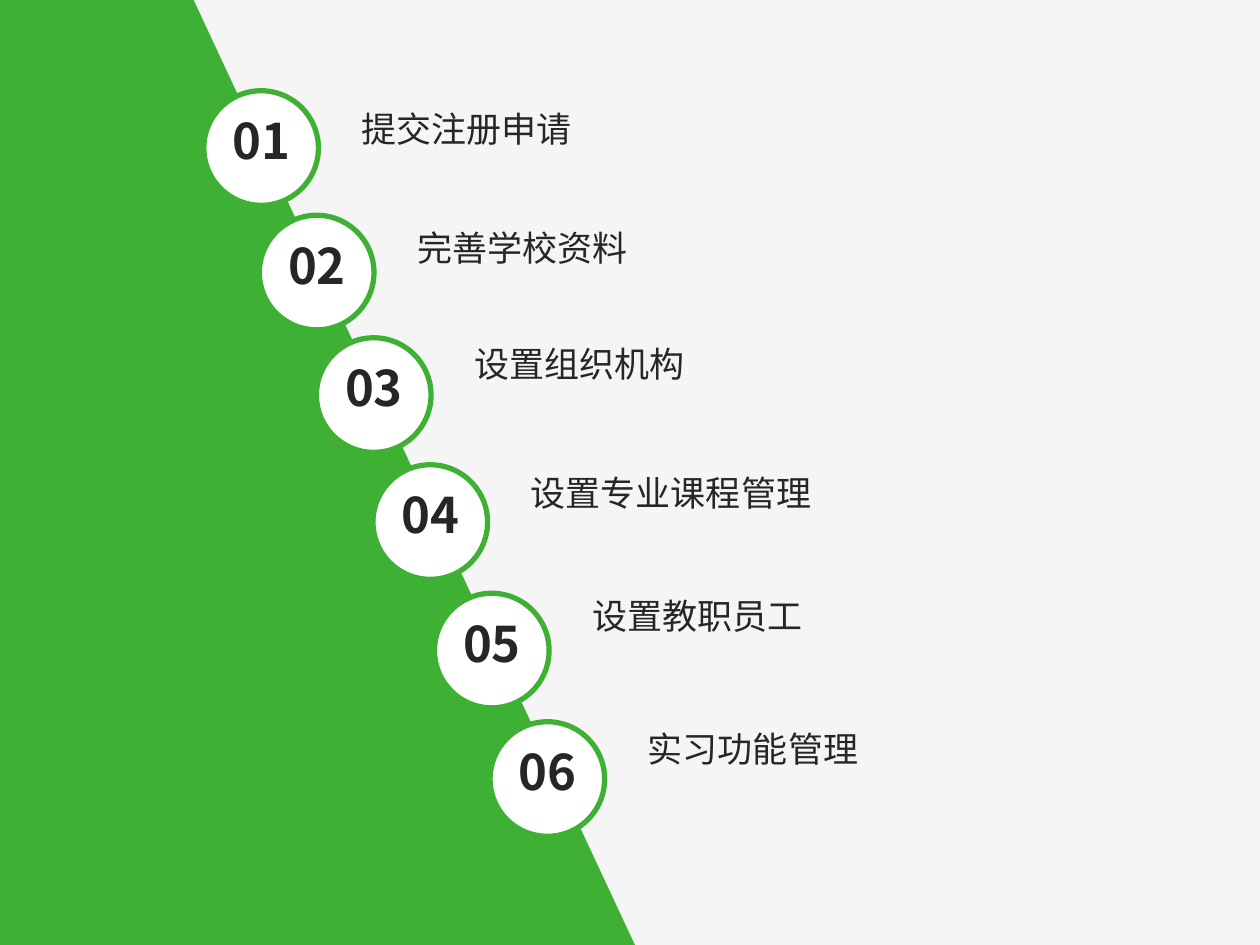
from dataclasses import dataclass

from lxml.etree import SubElement
from pptx import Presentation
from pptx.dml.color import RGBColor
from pptx.enum.shapes import MSO_SHAPE
from pptx.enum.text import PP_ALIGN
from pptx.oxml.ns import qn
from pptx.util import Cm, Pt

GREEN = RGBColor(0x3E, 0xB0, 0x34)
WHITE = RGBColor(0xFF, 0xFF, 0xFF)
PAPER = RGBColor(0xF5, 0xF5, 0xF5)
INK = RGBColor(0x26, 0x26, 0x26)
SANS = "Noto Sans CJK SC"
SERIF = "Times New Roman"
DIAMETER = 2.31
LABEL_OFFSET = 2.93


@dataclass
class Step:
    text: str
    x: float
    y: float
    label_y: float
    label_w: float
    font: str = SERIF


STEPS = [
    Step("提交注册申请", 4.11, 1.83, 2.16, 15.52, SANS),
    Step("完善学校资料", 5.23, 4.34, 4.57, 15.52, SANS),
    Step("设置组织机构", 6.38, 6.81, 6.91, 13.89),
    Step("设置专业课程管理", 7.52, 9.37, 9.5, 13.89),
    Step("设置教职员工", 8.76, 11.96, 11.99, 13.87),
    Step("实习功能管理", 9.88, 14.55, 14.66, 12.27),
]


def add_text(shapes, text: str, x: float, y: float, w: float, h: float, *,
             size: int, font: str = SANS, bold: bool = False,
             align: PP_ALIGN = PP_ALIGN.LEFT) -> None:
    tf = shapes.add_textbox(Cm(x), Cm(y), Cm(w), Cm(h)).text_frame
    tf.word_wrap = True
    tf.margin_top = tf.margin_bottom = 0
    p = tf.paragraphs[0]
    p.alignment = align
    r = p.add_run()
    r.text = text
    r.font.size = Pt(size)
    r.font.bold = bold
    r.font.color.rgb = INK
    r.font.name = font
    SubElement(r.font._element, qn("a:ea")).set("typeface", SANS)


def add_panel(s) -> None:
    builder = s.shapes.build_freeform(Cm(12.8), Cm(19.05))
    corners = [(3.89, -0.03), (-0.08, -0.03), (-0.03, 19.15)]
    builder.add_line_segments([(Cm(x), Cm(y)) for x, y in corners], close=True)
    sp = builder.convert_to_shape()
    sp.shadow.inherit = False
    sp.fill.solid()
    sp.fill.fore_color.rgb = GREEN
    sp.line.fill.background()


def add_step(s, number: int, step: Step) -> None:
    badge = s.shapes.add_group_shape()
    sp = badge.shapes.add_shape(MSO_SHAPE.OVAL, Cm(step.x), Cm(step.y),
                                Cm(DIAMETER), Cm(DIAMETER))
    sp.shadow.inherit = False
    sp.fill.solid()
    sp.fill.fore_color.rgb = WHITE
    sp.line.color.rgb = GREEN
    sp.line.width = Pt(3)
    add_text(badge.shapes, f"{number:02}", step.x + 0.22, step.y + 0.4,
             1.88, 1.45, size=28, bold=True, align=PP_ALIGN.CENTER)
    add_text(s.shapes, step.text, step.x + LABEL_OFFSET, step.label_y,
             step.label_w, 1.12, size=20, font=step.font)


def main() -> None:
    prs = Presentation()
    prs.slide_width, prs.slide_height = Cm(25.4), Cm(19.05)
    s = prs.slides.add_slide(prs.slide_layouts[6])
    s.background.fill.solid()
    s.background.fill.fore_color.rgb = PAPER
    add_panel(s)
    for number, step in enumerate(STEPS, 1):
        add_step(s, number, step)
    prs.save("out.pptx")


if __name__ == "__main__":
    main()
